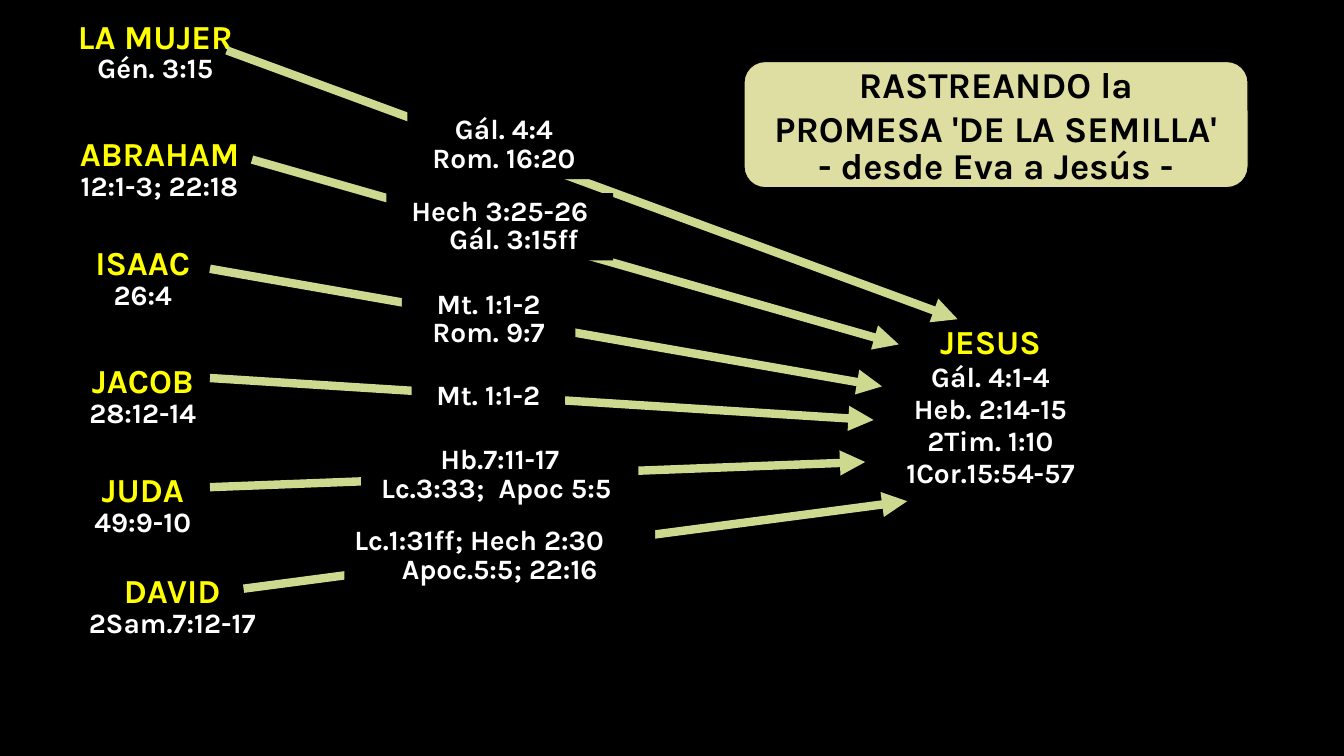
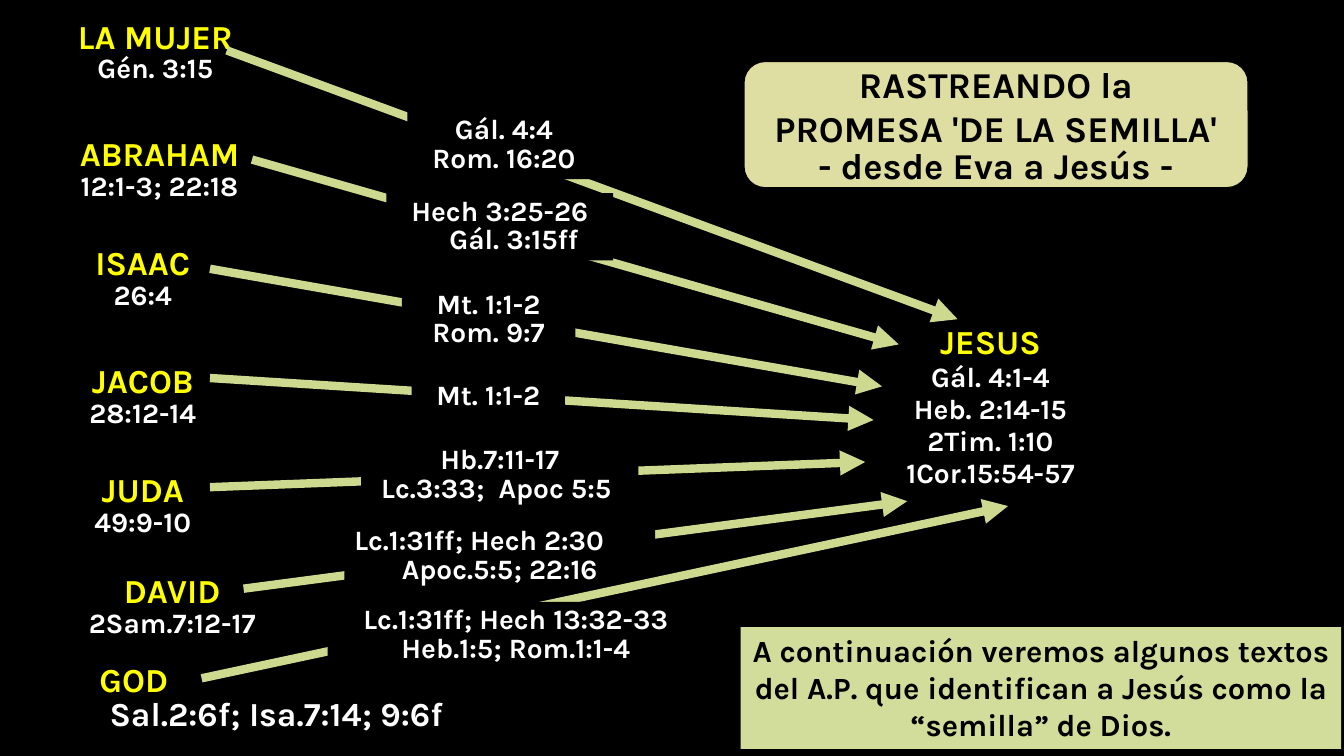
"""Build two slides that trace the promise of the seed from Eve to Jesus."""
from dataclasses import dataclass

from lxml import etree
from pptx import Presentation
from pptx.dml.color import RGBColor
from pptx.enum.shapes import MSO_CONNECTOR, MSO_SHAPE
from pptx.enum.text import MSO_ANCHOR, MSO_AUTO_SIZE, PP_ALIGN
from pptx.oxml.ns import qn
from pptx.util import Pt

RECT, ROUNDED = MSO_SHAPE.RECTANGLE, MSO_SHAPE.ROUNDED_RECTANGLE
STRAIGHT = MSO_CONNECTOR.STRAIGHT
LEFT, CENTER = PP_ALIGN.LEFT, PP_ALIGN.CENTER
TOP, MIDDLE = MSO_ANCHOR.TOP, MSO_ANCHOR.MIDDLE
GROW, FIXED = MSO_AUTO_SIZE.SHAPE_TO_FIT_TEXT, MSO_AUTO_SIZE.NONE


@dataclass(frozen=True)
class Theme:
    """Colours, font and sizes shared by the slides."""
    font: str = "Karla"
    black: str = "000000"
    white: str = "FFFFFF"
    yellow: str = "FFFF00"
    arrow: str = "CDD98F"
    title_fill: str = "DEDEA2"
    note_fill: str = "D2DD9B"
    name_size: int = 24
    verse_size: int = 20
    title_size: int = 26
    note_size: int = 22
    arrow_width: int = 6
    tight: float = 0.85
    loose: float = 0.95


@dataclass
class Line:
    """One paragraph and the ways it departs from its block."""
    text: str
    align: PP_ALIGN = CENTER
    indent: int = 0


SOURCES = [
    ((42, 12, 138, 53), "LA MUJER", "Gén. 3:15"),
    ((42, 96, 144, 73), "ABRAHAM", "12:1-3; 22:18"),
    ((42, 174, 120, 53), "ISAAC", "26:4"),
    ((42, 258, 120, 53), "JACOB", "28:12-14"),
    ((42, 336, 120, 53), "JUDA", "49:9-10"),
    ((42, 408, 162, 53), "DAVID", "2Sam.7:12-17"),
]
ARROWS = [
    (162, 36, 684, 228),
    (180, 114, 642, 246),
    (150, 192, 630, 276),
    (150, 270, 624, 300),
    (150, 348, 618, 330),
    (174, 420.5, 648, 358),
]
VERSES = [
    ((291, 80, 138, 48), [Line("Gál. 4:4"), Line("Rom. 16:20")]),
    ((276, 138, 162, 48), [Line("Hech 3:25-26"), Line("Gál. 3:15ff", indent=20)]),
    ((287, 204.5, 124, 48), [Line("Mt. 1:1-2"), Line("Rom. 9:7")]),
    ((294, 270, 109.5, 28), [Line("Mt. 1:1-2")]),
    ((258, 315.5, 198, 48), [Line("Hb.7:11-17"), Line("Lc.3:33;  Apoc 5:5 ")]),
    ((246, 373.5, 222, 48),
     [Line("Lc.1:31ff; Hech 2:30", LEFT), Line("Apoc.5:5; 22:16")]),
]
JESUS_VERSES = ["Gál. 4:1-4", "Heb. 2:14-15", "2Tim. 1:10", "1Cor.15:54-57"]


class Deck:
    """Hold the style and the current slide."""

    def __init__(self, theme):
        """Start a presentation."""
        self.theme = theme
        self.prs = Presentation()
        self.prs.slide_width, self.prs.slide_height = Pt(960), Pt(540)
        self.s = None

    def new_slide(self):
        """Add a blank slide with the dark background."""
        self.s = self.prs.slides.add_slide(self.prs.slide_layouts[6])
        self.paint(self.s.background.fill, self.theme.black)

    def paint(self, fill, color):
        """Make a fill solid."""
        fill.solid()
        fill.fore_color.rgb = RGBColor.from_string(color)

    def frame(self, sp, **changes):
        """Set up the text frame of a shape."""
        tf = sp.text_frame
        fmt = {"word_wrap": True, "auto_size": GROW, "vertical_anchor": TOP}
        for key, value in (fmt | changes).items():
            setattr(tf, key, value)
        return tf

    def add_lines(self, tf, lines, size, color, spacing=None):
        """Append lines to a text frame, using its empty first paragraph."""
        fmt = {"name": self.theme.font, "size": Pt(size), "bold": True}
        for line in lines:
            p = tf.paragraphs[-1]
            if p.runs:
                p = tf.add_paragraph()
            p.alignment = line.align
            p.line_spacing = spacing
            if line.indent:
                p._p.get_or_add_pPr().set("marL", str(Pt(line.indent)))
            r = p.add_run()
            r.text = line.text
            for key, value in fmt.items():
                setattr(r.font, key, value)
            r.font.color.rgb = RGBColor.from_string(color)

    def person(self, box, name, verses, spacing=None, verse_size=None):
        """Add a yellow name with white verses below it."""
        t = self.theme
        spacing = spacing or t.tight
        tf = self.frame(self.s.shapes.add_textbox(*map(Pt, box)))
        self.add_lines(tf, [name], t.name_size, t.yellow, spacing)
        self.add_lines(tf, verses, verse_size or t.verse_size, t.white, spacing)

    def panel(self, kind, box, fill):
        """Add a filled shape without outline or shadow."""
        sp = self.s.shapes.add_shape(kind, *map(Pt, box))
        sp.shadow.inherit = False
        self.paint(sp.fill, fill)
        sp.line.fill.background()
        return sp

    def verse_box(self, box, lines):
        """Add verses on a dark panel that interrupts an arrow."""
        t = self.theme
        tf = self.frame(self.panel(RECT, box, t.black))
        self.add_lines(tf, lines, t.verse_size, t.white, t.tight)

    def arrow(self, x1, y1, x2, y2):
        """Add a thick arrow."""
        c = self.s.shapes.add_connector(STRAIGHT, *map(Pt, (x1, y1, x2, y2)))
        c.line.width = Pt(self.theme.arrow_width)
        self.paint(c.line.fill, self.theme.arrow)
        etree.SubElement(c.line._get_or_add_ln(), qn("a:tailEnd"), type="triangle")
        etree.SubElement(c._element.spPr, qn("a:effectLst"))

    def title(self, box, lines, last):
        """Add the rounded title with a tighter last line."""
        t = self.theme
        sp = self.panel(ROUNDED, box, t.title_fill)
        self.paint(sp.line.fill, t.black)
        sp.line.width = Pt(0.75)
        tf = self.frame(sp, word_wrap=False, auto_size=FIXED, vertical_anchor=MIDDLE)
        self.add_lines(tf, lines, t.title_size, t.black)
        self.add_lines(tf, [last], t.title_size, t.black, t.tight)

    def note(self, box, text):
        """Add the closing note."""
        t = self.theme
        tf = self.frame(self.panel(RECT, box, t.note_fill))
        self.add_lines(tf, [Line(text)], t.note_size, t.black)

    def promise(self):
        """Add a slide with the chain of the promise."""
        self.new_slide()
        for box, name, verse in SOURCES:
            self.person(box, Line(name), [Line(verse)])
        self.person((624, 228, 167, 127), Line("JESUS"),
                    [Line(v) for v in JESUS_VERSES], self.theme.loose)
        for ends in ARROWS:
            self.arrow(*ends)
        for box, lines in VERSES:
            self.verse_box(box, lines)
        self.title((531.5, 44, 360, 90),
                   [Line("RASTREANDO la"), Line("PROMESA 'DE LA SEMILLA'")],
                   Line("- desde Eva a Jesús -"))


def main():
    """Build and save the slides."""
    deck = Deck(Theme())
    deck.promise()
    deck.promise()
    deck.note((529, 448, 429, 87),
              "A continuación veremos algunos textos del A.P. que identifican "
              "a Jesús como la “semilla” de Dios.")
    deck.person((46, 471.5, 302.5, 57), Line("GOD", LEFT, 18),
                [Line("Sal.2:6f; Isa.7:14; 9:6f")],
                verse_size=deck.theme.name_size)
    deck.arrow(144, 484.5, 720, 361.5)
    deck.verse_box((234, 430, 269, 48),
                   [Line("Lc.1:31ff; Hech 13:32-33"), Line("Heb.1:5; Rom.1:1-4")])
    deck.prs.save("out.pptx")


if __name__ == "__main__":
    main()
